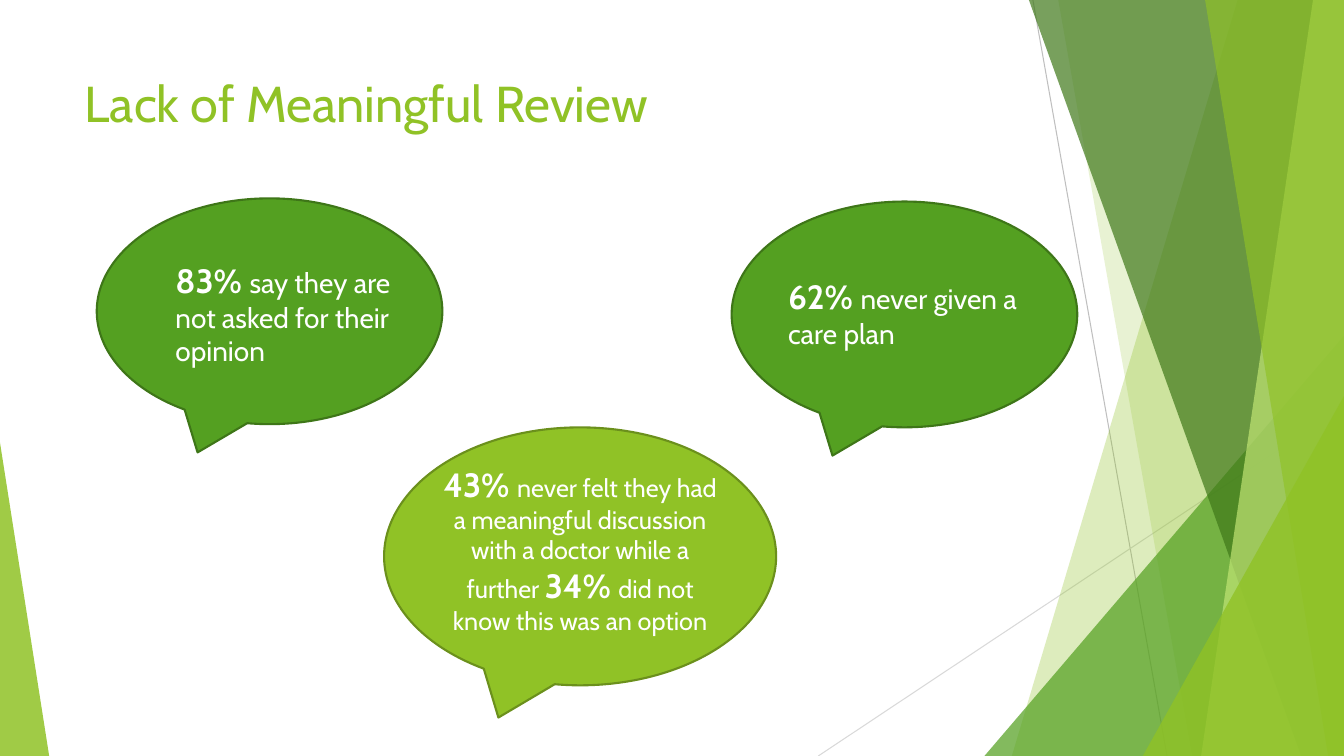
import dataclasses

import pptx
import pptx.dml.color
import pptx.enum.shapes
import pptx.enum.text
import pptx.oxml.ns
import pptx.util
from lxml import etree

Cm = pptx.util.Cm
Shape = pptx.enum.shapes.MSO_SHAPE
Align = pptx.enum.text.PP_ALIGN
Anchor = pptx.enum.text.MSO_ANCHOR
qn = pptx.oxml.ns.qn


@dataclasses.dataclass(frozen=True)
class Theme:
    font: str = "Cabin"
    lime: str = "90C226"
    pale_lime: str = "C0E474"
    lime_edge: str = "6B901C"
    green: str = "54A021"
    green_edge: str = "3E7618"
    dark_green: str = "3F7819"
    ray: str = "BFBFBF"
    pale_ray: str = "D9D9D9"
    white: str = "FFFFFF"
    title: int = 36
    figure: int = 24
    large: int = 20
    body: int = 18


@dataclasses.dataclass(frozen=True)
class Box:
    """A region of the slide, in centimetres."""
    left: float
    top: float
    width: float
    height: float

    def inner(self, left, top, width, height):
        return Box(self.left + left, self.top + top, width, height)

    def lengths(self):
        return [Cm(v) for v in (self.left, self.top, self.width, self.height)]


THEME = Theme()
SLIDE = Box(0, 0, 33.87, 19.05)


def rgb(colour):
    return pptx.dml.color.RGBColor.from_string(colour)


def write(paragraph, text, *, size, colour, bold=False):
    run = paragraph.add_run()
    run.text = text
    run.font.name = THEME.font
    run.font.size = pptx.util.Pt(size)
    run.font.bold = bold
    run.font.color.rgb = rgb(colour)


def paint(shape, colour, opacity=100, edge=None):
    shape.shadow.inherit = False
    shape.fill.solid()
    shape.fill.fore_color.rgb = rgb(colour)
    if opacity < 100:
        tint = shape.fill._xPr.find(".//" + qn("a:srgbClr"))
        etree.SubElement(tint, qn("a:alpha")).set("val", str(opacity * 1000))
    if edge:
        shape.line.color.rgb = rgb(edge)
        shape.line.width = pptx.util.Pt(1.5)
    else:
        shape.line.fill.background()


def add_ray(slide, box, start, end, colour):
    points = [Cm(v) for x, y in (start, end) for v in (box.left + x, box.top + y)]
    ray = slide.shapes.add_connector(pptx.enum.shapes.MSO_CONNECTOR.STRAIGHT, *points)
    ray.line.color.rgb = rgb(colour)
    ray.line.width = pptx.util.Pt(0.75)
    etree.SubElement(ray._element.spPr, qn("a:effectLst"))


def add_band(slide, box, top_x, bottom_x, colour, opacity):
    """Fill the box to the right of a slanted edge."""
    corners = [(top_x, 0), (box.width, 0), (box.width, box.height), (bottom_x, box.height)]
    points = [(Cm(box.left + x), Cm(box.top + y)) for x, y in corners]
    outline = slide.shapes.build_freeform(*points[0])
    outline.add_line_segments(points[1:], close=True)
    paint(outline.convert_to_shape(), colour, opacity)


def add_corner(slide, box, apex, colour, opacity):
    """Fill the box with a triangle whose apex lies at 0 (left) to 1 (right)."""
    corner = slide.shapes.add_shape(Shape.ISOSCELES_TRIANGLE, *box.lengths())
    corner.adjustments[0] = apex
    paint(corner, colour, opacity)


def add_facets(slide, box):
    def right_corner(left, top, colour, opacity):
        area = box.inner(left, top, box.width - left, box.height - top)
        add_corner(slide, area, 1, colour, opacity)

    add_ray(slide, box, (5.41, 0), (8.79, box.height), THEME.ray)
    add_ray(slide, box, (box.width, 10.24), (0, box.height), THEME.pale_ray)
    add_band(slide, box, 10.57, 4.88, THEME.lime, 30)
    add_band(slide, box, 6.05, 9.42, THEME.lime, 20)
    right_corner(4.19, 8.46, THEME.green, 72)
    add_band(slide, box, 5.31, 12.17, THEME.dark_green, 70)
    add_band(slide, box, 12.47, 9.65, THEME.pale_lime, 70)
    add_band(slide, box, 9.75, 12.85, THEME.lime, 65)
    right_corner(8.18, 9.98, THEME.lime, 80)


def add_title(slide, box, text):
    title = slide.shapes.title
    title.left, title.top, title.width, title.height = box.lengths()
    title.text_frame.vertical_anchor = Anchor.TOP
    paragraph = title.text_frame.paragraphs[0]
    paragraph.alignment = Align.LEFT
    write(paragraph, text, size=THEME.title, colour=THEME.lime)


def add_bubble(slide, box, fill, edge):
    bubble = slide.shapes.add_shape(Shape.OVAL_CALLOUT, *box.lengths())
    paint(bubble, fill, edge=edge)


def add_finding(slide, box, parts, size, align=Align.LEFT):
    """Write (figure, statement) pairs as one paragraph with bold figures."""
    frame = slide.shapes.add_textbox(*box.lengths()).text_frame
    frame.word_wrap = True
    paragraph = frame.paragraphs[0]
    paragraph.alignment = align
    for figure, statement in parts:
        write(paragraph, figure, size=THEME.figure, colour=THEME.white, bold=True)
        write(paragraph, statement, size=size, colour=THEME.white)


def build_review_slide(deck):
    slide = deck.slides.add_slide(deck.slide_layouts[5])
    add_facets(slide, SLIDE.inner(20.62, 0, 13.25, SLIDE.height))
    add_corner(slide, SLIDE.inner(0, 11.15, 1.24, 7.9), 0, THEME.lime, 85)
    add_title(slide, SLIDE.inner(1.88, 1.7, 23.88, 3.66), "Lack of Meaningful Review")

    opinion = SLIDE.inner(2.44, 5, 8.71, 5.69)
    care_plan = SLIDE.inner(18.44, 5.08, 8.71, 5.69)
    discussion = SLIDE.inner(9.68, 10.77, 9.88, 6.5)
    for bubble in (opinion, care_plan):
        add_bubble(slide, bubble, THEME.green, THEME.green_edge)
    add_bubble(slide, discussion, THEME.lime, THEME.lime_edge)

    add_finding(slide, opinion.inner(1.73, 1.42, 6.38, 3),
                [("83% ", "say they are not asked for their opinion")], THEME.large)
    add_finding(slide, care_plan.inner(1.17, 1.75, 6.38, 2.13),
                [("62% ", "never given a care plan")], THEME.large)
    add_finding(slide, discussion.inner(1.04, 0.79, 7.8, 5.38),
                [("43% ", "never felt they had a meaningful discussion "
                          "with a doctor while a further "),
                 ("34% ", "did not know this was an option")],
                THEME.body, Align.CENTER)


def main():
    deck = pptx.Presentation()
    deck.slide_width, deck.slide_height = Cm(SLIDE.width), Cm(SLIDE.height)
    build_review_slide(deck)
    deck.save("out.pptx")


if __name__ == "__main__":
    main()
